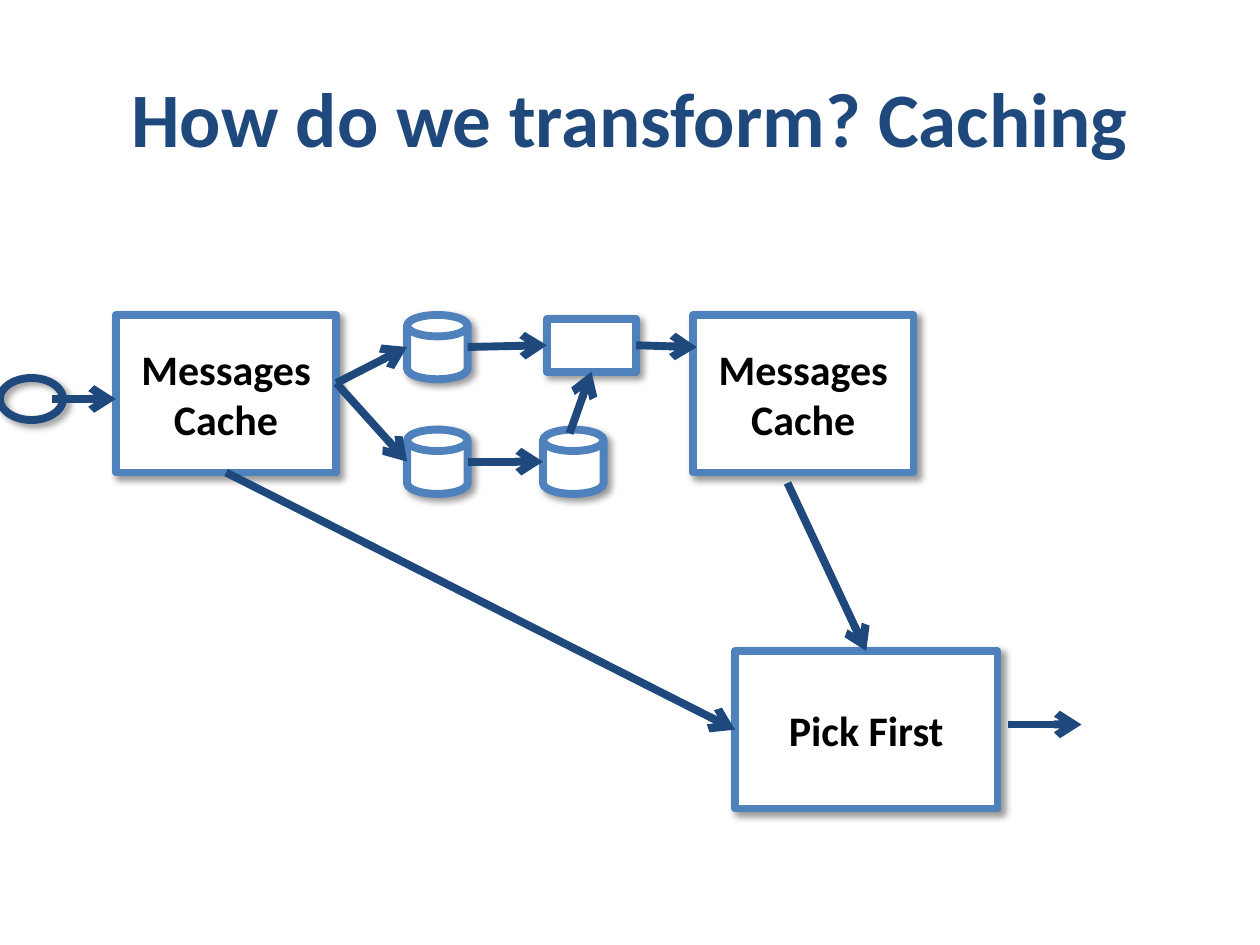
from lxml import etree
from pptx import Presentation
from pptx.dml.color import RGBColor
from pptx.enum.shapes import MSO_CONNECTOR, MSO_SHAPE
from pptx.enum.text import MSO_ANCHOR, PP_ALIGN
from pptx.oxml import parse_xml
from pptx.oxml.ns import nsdecls, qn
from pptx.util import Pt

PROCESS = MSO_SHAPE.FLOWCHART_PROCESS
DISK = MSO_SHAPE.FLOWCHART_MAGNETIC_DISK
OVAL = MSO_SHAPE.OVAL
STRAIGHT = MSO_CONNECTOR.STRAIGHT
MIDDLE = MSO_ANCHOR.MIDDLE
CENTER = PP_ALIGN.CENTER

NAVY = RGBColor(0x1F, 0x49, 0x7D)
BLUE = RGBColor(0x4F, 0x81, 0xBD)
WHITE = RGBColor(0xFF, 0xFF, 0xFF)
BLACK = RGBColor(0x00, 0x00, 0x00)

LINE_WIDTH = Pt(4.5)
TOP, LEFT, BOTTOM, RIGHT = range(4)
SHADOW_XML = (
    f'<a:outerShdw {nsdecls("a")} blurRad="{Pt(4)}" dist="{Pt(3)}" dir="2700000"'
    ' algn="tl" rotWithShape="0"><a:srgbClr val="000000">'
    '<a:alpha val="40000"/></a:srgbClr></a:outerShdw>'
)


def write_text(frame, text, size=24, color=BLACK, bold=True):
    frame.text = text
    frame.word_wrap = True
    frame.vertical_anchor = MIDDLE
    for paragraph in frame.paragraphs:
        paragraph.alignment = CENTER
        for run in paragraph.runs:
            run.font.name = "Calibri"
            run.font.size = Pt(size)
            run.font.bold = bold
            run.font.color.rgb = color


def add_arrow(start, end, source=None, target=None):
    arrow = slide.shapes.add_connector(STRAIGHT, *map(Pt, start + end))
    if source:
        arrow.begin_connect(*source)
    if target:
        arrow.end_connect(*target)
    arrow.line.color.rgb = NAVY
    arrow.line.width = LINE_WIDTH
    properties = arrow._element.spPr
    etree.SubElement(properties.find(qn("a:ln")), qn("a:tailEnd"), type="arrow")
    etree.SubElement(properties, qn("a:effectLst"))


prs = Presentation()
prs.slide_width, prs.slide_height = Pt(720), Pt(540)
slide = prs.slides.add_slide(prs.slide_layouts[5])

title = slide.shapes.title
title.left, title.top, title.width, title.height = map(Pt, (36, 21.6, 648, 90))
write_text(title.text_frame, "How do we transform? Caching", size=44, color=NAVY)

nodes = []
for kind, left, top, width, height, label in (
    (PROCESS, 66.2, 180, 126, 90, "Messages\nCache"),
    (PROCESS, 396, 180, 126, 90, "Messages\nCache"),
    (PROCESS, 420, 372, 150, 90, "Pick First"),
    (OVAL, 0, 216, 36, 24, ""),
    (DISK, 232.6, 180, 34.6, 36.7, ""),
    (DISK, 232.6, 245.5, 34.6, 36.7, ""),
    (DISK, 310.3, 245.5, 34.6, 36.7, ""),
    (PROCESS, 312.5, 182.2, 51, 30.2, ""),
):
    node = slide.shapes.add_shape(kind, *map(Pt, (left, top, width, height)))
    if kind == OVAL:
        node.fill.background()
        node.line.color.rgb = NAVY
    else:
        node.fill.solid()
        node.fill.fore_color.rgb = WHITE
        node.line.color.rgb = BLUE
    node.line.width = LINE_WIDTH
    node.shadow.inherit = False
    node._element.spPr.find(qn("a:effectLst")).append(parse_xml(SHADOW_XML))
    if label:
        write_text(node.text_frame, label)
    nodes.append(node)

first_cache, second_cache, pick_first = nodes[:3]
merge_step = nodes[-1]

add_arrow((129.2, 270), (420, 417), (first_cache, BOTTOM), (pick_first, LEFT))
add_arrow((30, 228), (66.2, 228))
add_arrow((450, 276), (495, 372), target=(pick_first, TOP))
add_arrow((576, 414), (618, 414))

add_arrow((192.2, 218.9), (232.6, 198.3))
add_arrow((192.2, 218.9), (232.6, 263.8))
add_arrow((267.2, 263.8), (310.3, 263.8))
add_arrow((267.2, 198.3), (312.5, 197.3), target=(merge_step, LEFT))
add_arrow((325.5, 247.7), (338, 212.4), target=(merge_step, BOTTOM))
add_arrow((363.5, 197.3), (398.2, 198.4), source=(merge_step, RIGHT))

prs.save("out.pptx")
